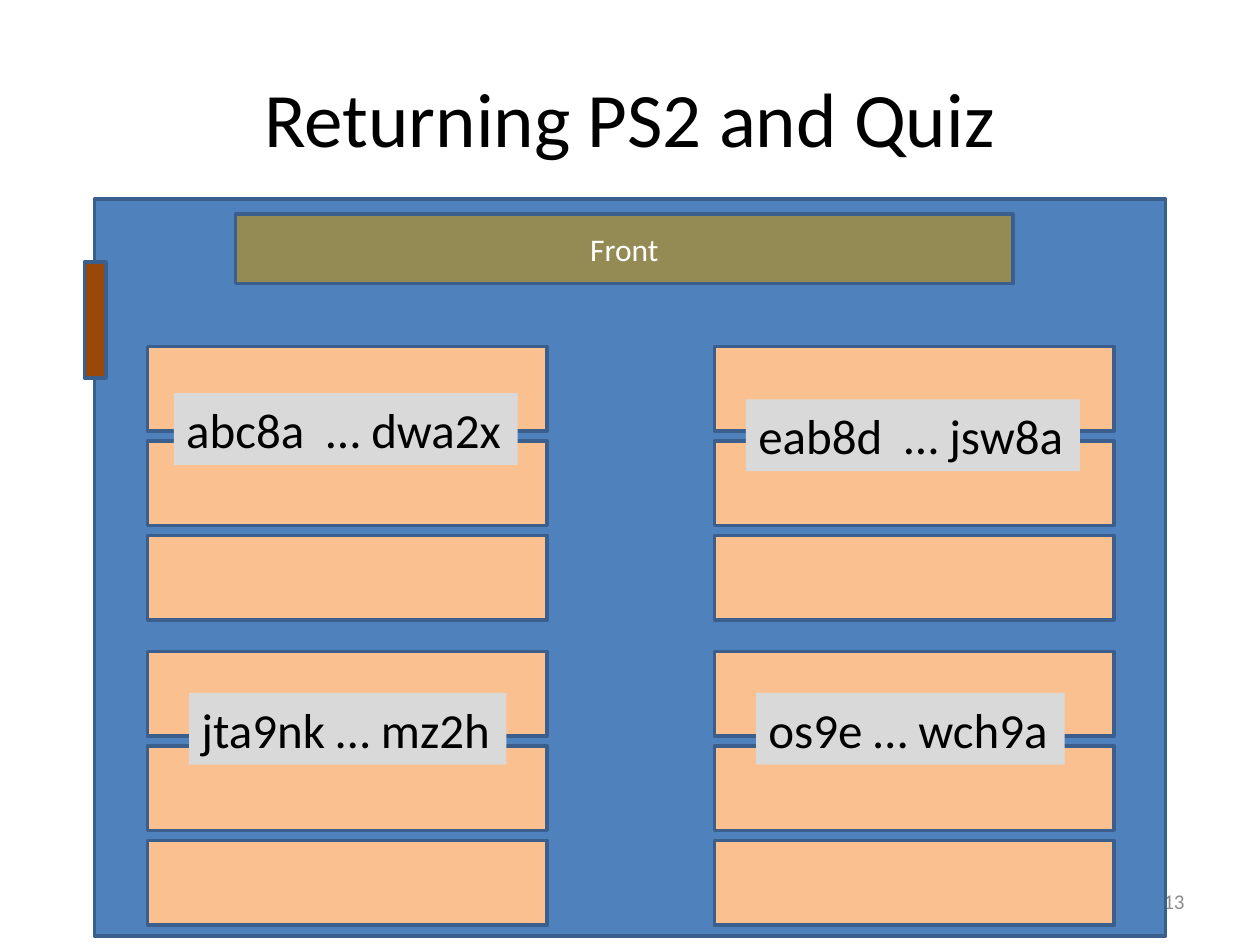
from itertools import product

from pptx import Presentation
from pptx.dml.color import RGBColor
from pptx.enum.shapes import MSO_SHAPE
from pptx.enum.text import MSO_ANCHOR, MSO_AUTO_SIZE, PP_ALIGN
from pptx.util import Inches, Pt

COLORS = {
    "room": "4F81BD",
    "outline": "3A5F8C",
    "front": "948A54",
    "door": "984807",
    "desk": "FAC090",
    "label": "D9D9D9",
    "black": "000000",
    "white": "FFFFFF",
    "number": "8C8C8C",
}


class SlideBuilder:
    font_name = "Calibri"
    outline_width = 2

    def __init__(self, presentation):
        self.slide = presentation.slides.add_slide(presentation.slide_layouts[6])

    def color(self, name):
        return RGBColor.from_string(COLORS[name])

    def set_text(self, shape, text, size, color, align):
        paragraph = shape.text_frame.paragraphs[0]
        paragraph.text = text
        paragraph.alignment = align
        paragraph.font.name = self.font_name
        paragraph.font.size = Pt(size)
        paragraph.font.color.rgb = self.color(color)

    def block(self, left, top, width, height, fill):
        shape = self.slide.shapes.add_shape(
            MSO_SHAPE.RECTANGLE, Inches(left), Inches(top), Inches(width), Inches(height)
        )
        shape.shadow.inherit = False
        shape.fill.solid()
        shape.fill.fore_color.rgb = self.color(fill)
        shape.line.color.rgb = self.color("outline")
        shape.line.width = Pt(self.outline_width)
        return shape

    def text(self, left, top, width, height, text, size, color, align):
        shape = self.slide.shapes.add_textbox(
            Inches(left), Inches(top), Inches(width), Inches(height)
        )
        shape.text_frame.word_wrap = True
        shape.text_frame.vertical_anchor = MSO_ANCHOR.MIDDLE
        self.set_text(shape, text, size, color, align)
        return shape

    def label(self, left, top, width, text):
        shape = self.text(left, top, width, 0.57, text, 28, "black", PP_ALIGN.LEFT)
        shape.fill.solid()
        shape.fill.fore_color.rgb = self.color("label")
        shape.text_frame.vertical_anchor = MSO_ANCHOR.TOP
        shape.text_frame.word_wrap = False
        shape.text_frame.auto_size = MSO_AUTO_SIZE.SHAPE_TO_FIT_TEXT


def main():
    presentation = Presentation()
    presentation.slide_width = Inches(10)
    presentation.slide_height = Inches(7.5)
    builder = SlideBuilder(presentation)

    builder.text(0.5, 0.3, 9, 1.25, "Returning PS2 and Quiz", 44, "black", PP_ALIGN.CENTER)
    builder.text(7.17, 6.95, 2.33, 0.4, "13", 12, "number", PP_ALIGN.RIGHT)

    builder.block(0.75, 1.58, 8.5, 5.85, "room")
    front = builder.block(1.87, 1.7, 6.17, 0.55, "front")
    front.text_frame.vertical_anchor = MSO_ANCHOR.MIDDLE
    builder.set_text(front, "Front", 18, "white", PP_ALIGN.CENTER)
    builder.block(0.67, 2.08, 0.17, 0.92, "door")

    desk_pitch = 0.75
    for section_top, left, row in product((2.75, 5.17), (1.17, 5.67), range(3)):
        builder.block(left, section_top + row * desk_pitch, 3.17, 0.67, "desk")

    labels = [
        (1.38, 3.12, 2.73, "abc8a  … dwa2x"),
        (5.92, 3.17, 2.65, "eab8d  … jsw8a"),
        (1.5, 5.5, 2.52, "jta9nk … mz2h"),
        (6, 5.5, 2.45, "os9e … wch9a"),
    ]
    for label in labels:
        builder.label(*label)

    presentation.save("out.pptx")


if __name__ == "__main__":
    main()
